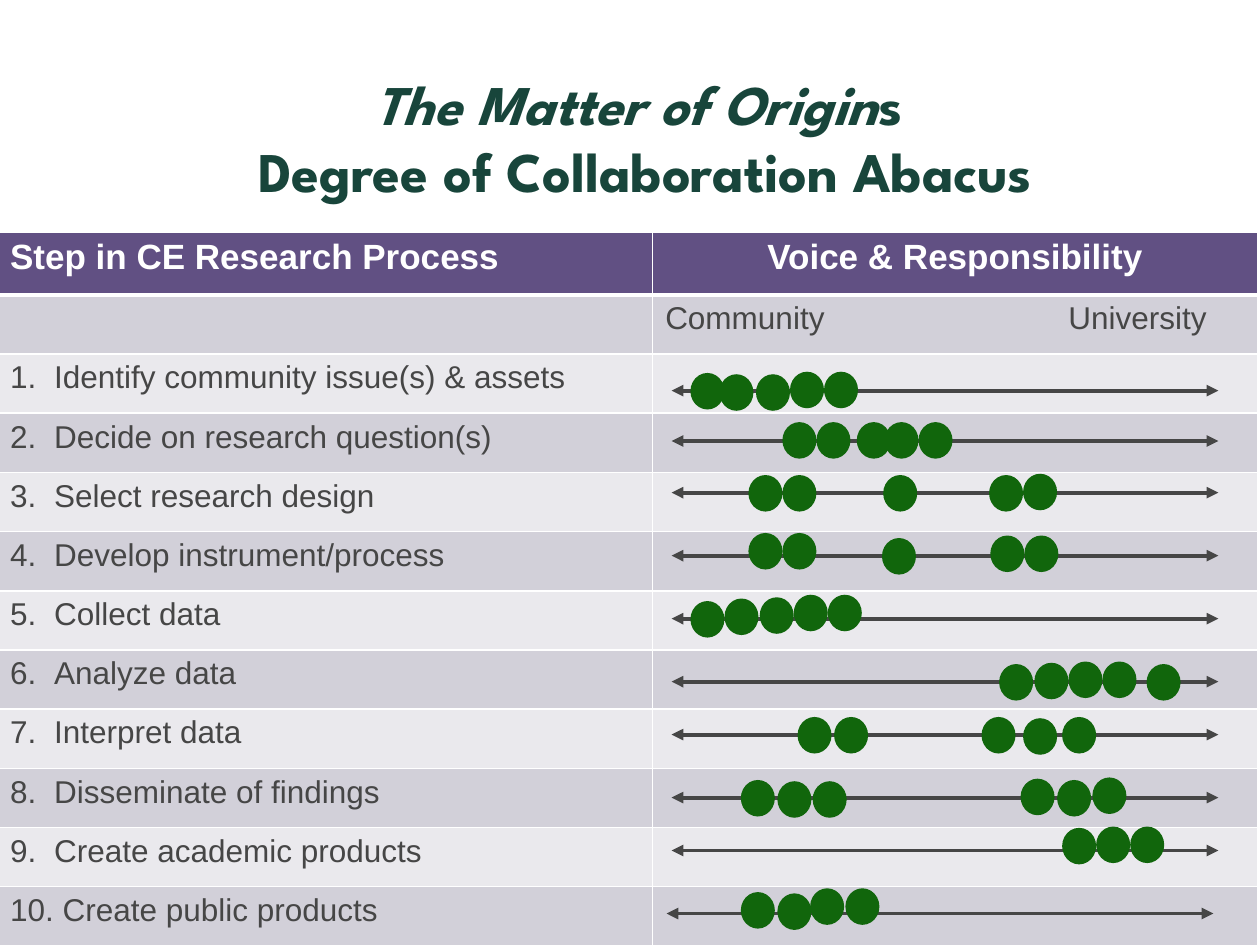
import pptx
import pptx.util
import pptx.dml.color
import pptx.enum.shapes
import pptx.enum.text
import pptx.oxml.ns
from lxml import etree

PX = 9144  # 100 px to the inch
THEME = {
    "title": "18453B", "text": "464646", "white": "FFFFFF", "header": "615083",
    "bands": ("D2D0D9", "EAE9ED"), "bead": "11660C",
    "title_font": "League Spartan", "body_font": "Arial",
    "title_size": 32, "header_size": 20, "body_size": 18,
}
qn = pptx.oxml.ns.qn
rgb = pptx.dml.color.RGBColor.from_string
ALIGN = pptx.enum.text.PP_ALIGN


def add_text(p, text, size=THEME["body_size"], color=THEME["text"],
             font=THEME["body_font"], bold=False, italic=False, align=ALIGN.LEFT):
    p.alignment = align
    r = p.add_run()
    r.text = text
    r.font.name, r.font.size = font, pptx.util.Pt(size)
    r.font.bold, r.font.italic = bold, italic
    r.font.color.rgb = rgb(color)


def set_tab(p, pos, hanging=False):
    pPr = p._p.get_or_add_pPr()
    if hanging:
        pPr.set("marL", str(pos * PX))
        pPr.set("indent", str(-pos * PX))
    tabs = etree.SubElement(pPr, qn("a:tabLst"))
    etree.SubElement(tabs, qn("a:tab"), pos=str(pos * PX), algn="l")


# Steps: name, arrow left, arrow y, beads as (left, top)
steps = [
    ("Identify community issue(s) & assets", 533, 310,
     [(548, 296), (571, 297), (600, 297), (627, 295), (654, 295)]),
    ("Decide on research question(s)", 533, 350,
     [(621, 335), (648, 335), (680, 335), (702, 335), (729, 335)]),
    ("Select research design", 533, 391,
     [(594, 377), (621, 377), (701, 377), (785, 377), (812, 376)]),
    ("Develop instrument/process", 533, 441,
     [(594, 423), (621, 423), (700, 427), (786, 425), (813, 425)]),
    ("Collect data", 533, 491,
     [(548, 477), (575, 475), (603, 474), (630, 472), (657, 472)]),
    ("Analyze data", 533, 541,
     [(793, 527), (821, 526), (848, 525), (875, 525), (910, 527)]),
    ("Interpret data", 533, 583,
     [(633, 569), (662, 569), (779, 569), (812, 570), (843, 569)]),
    ("Disseminate of findings", 533, 633,
     [(588, 619), (617, 620), (645, 620), (810, 618), (839, 619), (867, 617)]),
    ("Create academic products", 533, 675,
     [(843, 657), (870, 656), (897, 656)]),
    ("Create public products", 529, 725,
     [(588, 708), (617, 709), (643, 705), (671, 705)]),
]

prs = pptx.Presentation()
prs.slide_width, prs.slide_height = 1000 * PX, 750 * PX
slide = prs.slides.add_slide(prs.slide_layouts[5])

# Title
title = slide.shapes.title
title.left, title.top, title.width, title.height = 50 * PX, 75 * PX, 925 * PX, 67 * PX
tf = title.text_frame
tf.auto_size = pptx.enum.text.MSO_AUTO_SIZE.NONE
tf.vertical_anchor = pptx.enum.text.MSO_ANCHOR.MIDDLE
p = tf.paragraphs[0]
title_style = dict(size=THEME["title_size"], color=THEME["title"],
                   font=THEME["title_font"], bold=True, align=ALIGN.CENTER)
add_text(p, "The Matter of Origin", italic=True, **title_style)
add_text(p, "s ", **title_style)
p.add_line_break()
add_text(p, "Degree of Collaboration Abacus", **title_style)

# Table grid
table = slide.shapes.add_table(len(steps) + 2, 2, -2 * PX, 184 * PX,
                               1000 * PX, 567 * PX).table
table.columns[0].width, table.columns[1].width = 520 * PX, 480 * PX
for i, row in enumerate(table.rows):
    row.height = (47 if i else 50) * PX
    for cell in row.cells:
        cell.fill.solid()
        cell.fill.fore_color.rgb = rgb(THEME["bands"][(i + 1) % 2] if i else THEME["header"])
        tcPr = cell._tc.get_or_add_tcPr()
        for n, side in enumerate(("lnL", "lnR", "lnT", "lnB")):
            thick = (i == 0 and side == "lnB") or (i == 1 and side == "lnT")
            ln = etree.Element(qn("a:" + side), w=str(pptx.util.Pt(3 if thick else 1)))
            fill = etree.SubElement(ln, qn("a:solidFill"))
            etree.SubElement(fill, qn("a:srgbClr"), val=THEME["white"])
            tcPr.insert(n, ln)

# Table text
header = dict(size=THEME["header_size"], color=THEME["white"], bold=True)
add_text(table.cell(0, 0).text_frame.paragraphs[0], "Step in CE Research Process", **header)
add_text(table.cell(0, 1).text_frame.paragraphs[0], "Voice & Responsibility",
         align=ALIGN.CENTER, **header)
p = table.cell(1, 1).text_frame.paragraphs[0]
set_tab(p, 320)
add_text(p, "Community\tUniversity")
for number, (name, *_) in enumerate(steps, 1):
    p = table.cell(number + 1, 0).text_frame.paragraphs[0]
    set_tab(p, 35, hanging=True)
    gap = "\t" if number < 10 else " "
    add_text(p, f"{number}.{gap}{name}")

# Abacus arrows and beads
for name, left, y, beads in steps:
    line = slide.shapes.add_connector(pptx.enum.shapes.MSO_CONNECTOR.STRAIGHT,
                                      left * PX, y * PX, (left + 434) * PX, y * PX)
    line.line.color.rgb = rgb(THEME["text"])
    line.line.width = pptx.util.Pt(2.25)
    ln = line.line._get_or_add_ln()
    for end in ("headEnd", "tailEnd"):
        etree.SubElement(ln, qn("a:" + end), type="triangle")
    etree.SubElement(line._element.spPr, qn("a:effectLst"))
    for x, top in beads:
        sp = slide.shapes.add_shape(pptx.enum.shapes.MSO_SHAPE.OVAL,
                                    x * PX, top * PX, 27 * PX, 29 * PX)
        sp.shadow.inherit = False
        sp.fill.solid()
        sp.fill.fore_color.rgb = rgb(THEME["bead"])
        sp.line.fill.background()

prs.save("out.pptx")
